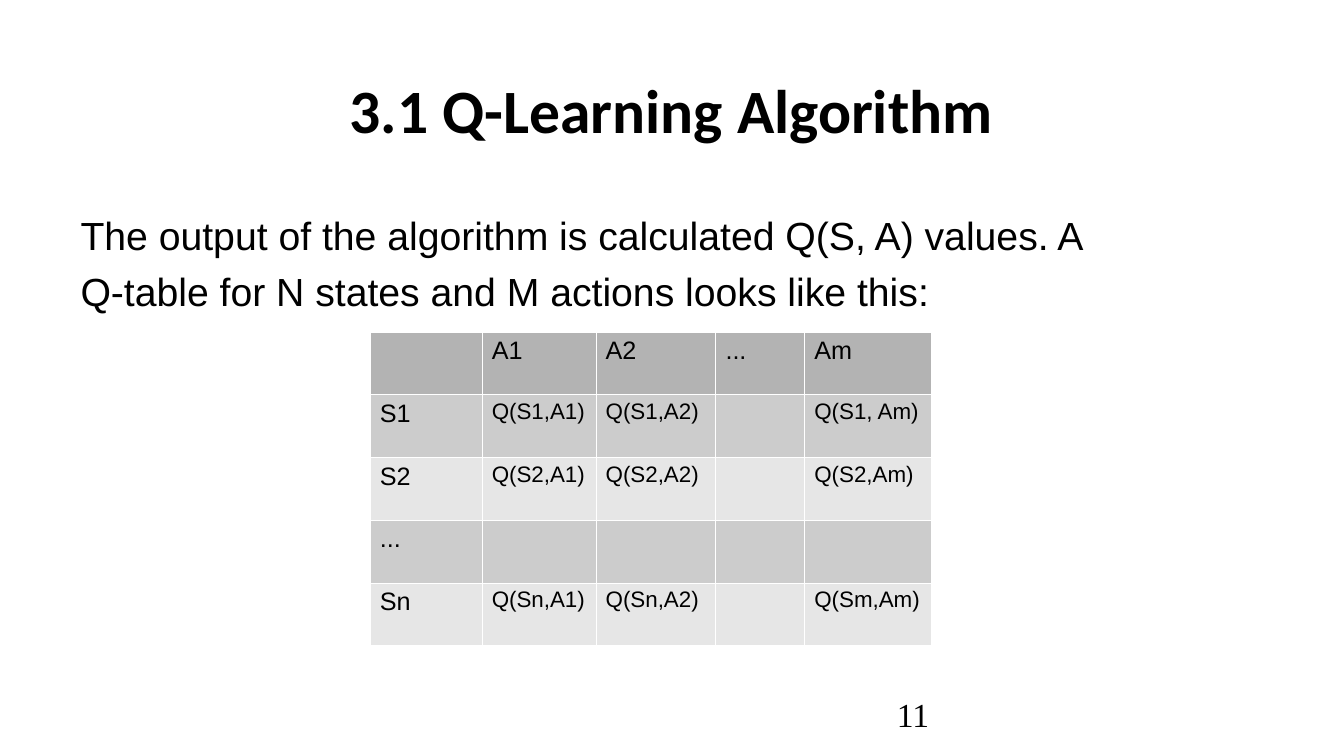
from lxml.etree import SubElement
from pptx import Presentation
from pptx.dml.color import RGBColor
from pptx.enum.text import MSO_ANCHOR, PP_ALIGN
from pptx.oxml.ns import qn
from pptx.util import Cm, Pt


def color(value):
    return RGBColor.from_string(value)


def write(paragraph, text, size=18, font="Arial", bold=False,
          align=PP_ALIGN.LEFT, line_spacing=1.0, space_before=0):
    paragraph.alignment = align
    paragraph.line_spacing = line_spacing
    paragraph.space_before = Pt(space_before)
    run = paragraph.add_run()
    run.text = text
    run.font.size = Pt(size)
    run.font.name = font
    run.font.bold = bold
    run.font.color.rgb = color("000000")


presentation = Presentation()
presentation.slide_width = Cm(33.87)
presentation.slide_height = Cm(19.05)
slide = presentation.slides.add_slide(presentation.slide_layouts[5])

body = slide.shapes.add_textbox(Cm(1.78), Cm(5.33), Cm(29.18), Cm(12.07))
body.text_frame.word_wrap = True
body_lines = [
    "The output of the algorithm is calculated Q(S, A) values. A",
    "Q-table for N states and M actions looks like this:",
]
for index, line in enumerate(body_lines):
    paragraph = body.text_frame.add_paragraph() if index else body.text_frame.paragraphs[0]
    write(paragraph, line, size=28, align=PP_ALIGN.JUSTIFY,
          line_spacing=0.9, space_before=10)

title = slide.shapes.title
title.left, title.top, title.width, title.height = Cm(2.34), Cm(1.02), Cm(29.18), Cm(3.66)
title.text_frame.vertical_anchor = MSO_ANCHOR.MIDDLE
write(title.text_frame.paragraphs[0], "3.1 Q-Learning Algorithm", size=44,
      font="Calibri", bold=True, align=PP_ALIGN.CENTER, line_spacing=0.9)

q_values = [
    ["", "A1", "A2", "...", "Am"],
    ["S1", "Q(S1,A1)", "Q(S1,A2)", "", "Q(S1, Am)"],
    ["S2", "Q(S2,A1)", "Q(S2,A2)", "", "Q(S2,Am)"],
    ["...", "", "", "", ""],
    ["Sn", "Q(Sn,A1)", "Q(Sn,A2)", "", "Q(Sm,Am)"],
]
column_widths = [2.82, 2.87, 3.02, 2.24, 3.2]
row_height = 1.58
header_fill = "B3B3B3"
band_fills = ["E6E6E6", "CCCCCC"]

table = slide.shapes.add_table(
    len(q_values), len(column_widths), Cm(9.32), Cm(8.36),
    Cm(sum(column_widths)), Cm(row_height * len(q_values))).table
table.first_row = False
table.horz_banding = False
for column, width in zip(table.columns, column_widths):
    column.width = Cm(width)

for row_index, row_values in enumerate(q_values):
    table.rows[row_index].height = Cm(row_height)
    row_fill = band_fills[row_index % 2] if row_index else header_fill
    for column_index, text in enumerate(row_values):
        cell = table.cell(row_index, column_index)
        properties = cell._tc.get_or_add_tcPr()
        for side in ("a:lnL", "a:lnR", "a:lnT", "a:lnB"):
            border = SubElement(properties, qn(side), w=str(Pt(0.06)))
            border_fill = SubElement(border, qn("a:solidFill"))
            SubElement(border_fill, qn("a:srgbClr"), val="FFFFFF")
        cell.fill.solid()
        cell.fill.fore_color.rgb = color(row_fill)
        if text:
            is_heading = row_index == 0 or column_index == 0
            write(cell.text_frame.paragraphs[0], text, size=18 if is_heading else 16)

page_number = slide.shapes.add_textbox(Cm(22.35), Cm(17.35), Cm(10.64), Cm(1.17))
page_number.text_frame.word_wrap = True
write(page_number.text_frame.paragraphs[0], "11", size=24, font="Times New Roman")

presentation.save("out.pptx")
